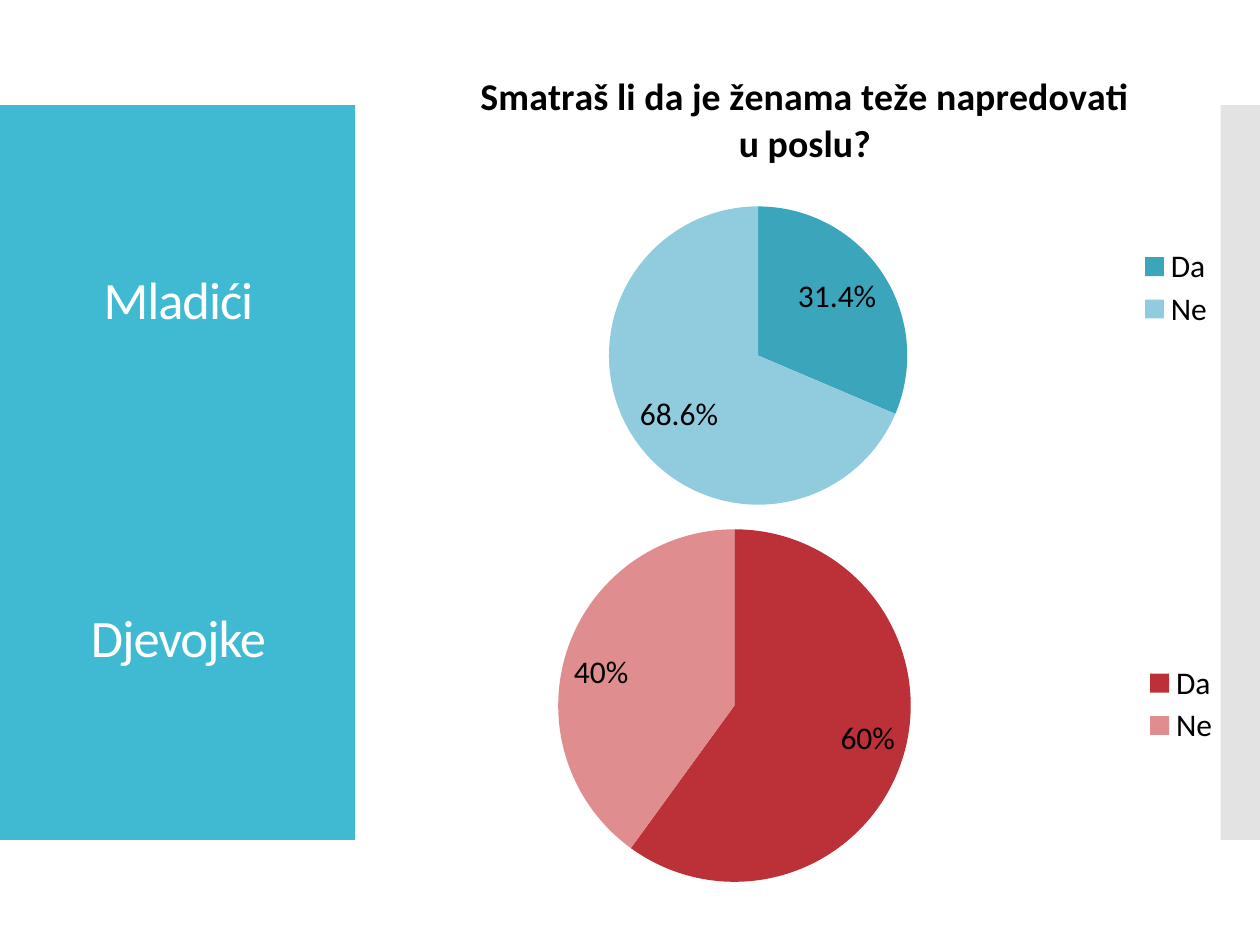
from lxml import etree
from pptx import Presentation
from pptx import util as u
from pptx.chart.data import CategoryChartData
from pptx.dml.color import RGBColor
from pptx.enum import chart as charts, shapes, text
from pptx.oxml import parse_xml
from pptx.oxml.ns import nsdecls, qn

FONT = "Calibri"
QUESTION = "Smatraš li da je ženama teže napredovati u poslu?"
GROUPS = ["Mladići", "Djevojke"]
ANSWERS = ["Da", "Ne"]

# Boxes are left, top, width, height in points
BANDS = [
    {"box": (0, 60, 203, 420), "fill": "40BAD2"},
    {"box": (697.5, 60, 22.5, 420), "fill": "C8C8C8", "alpha": 50},
]
PIES = [
    {"name": QUESTION, "title": QUESTION, "values": (0.314, 0.686), "format": "0.0%",
     "colors": ("3AA5BB", "90CCDE"), "box": (218, 26, 484, 278),
     "plot": (348, 118, 170.5, 170.5), "legend": (650, 139, 44, 51)},
    {"name": "Series 1", "title": None, "values": (0.6, 0.4), "format": "0%",
     "colors": ("BB3137", "E08D8F"), "box": (221, 292, 484, 221),
     "plot": (319, 302.5, 201.5, 201.5), "legend": (653, 377, 44, 51)},
]


def points(box):
    return [u.Pt(length) for length in box]


def color(value):
    return RGBColor.from_string(value)


def style_font(font, size, bold=False, fill="000000"):
    font.name, font.size, font.bold = FONT, u.Pt(size), bold
    font.color.rgb = color(fill)


def write(para, content, size, bold=False, fill="000000", tracking=None):
    span = para.add_run()
    span.text = content
    style_font(span.font, size, bold, fill)
    if tracking is not None:
        span.font._element.set("spc", str(round(tracking * 100)))


def add_band(page, box, fill, alpha=None):
    band = page.shapes.add_shape(shapes.MSO_SHAPE.RECTANGLE, *points(box))
    band.shadow.inherit = False
    band.fill.solid()
    band.fill.fore_color.rgb = color(fill)
    band.line.fill.background()
    if alpha is not None:
        tint = band._element.spPr.find(".//" + qn("a:srgbClr"))
        etree.SubElement(tint, qn("a:alpha")).set("val", str(alpha * 1000))


def layout_xml(part, frame, inner=False):
    """Manual layout of a chart part, as fractions of the chart frame."""
    left, top, width, height = frame
    shares = {"x": (part[0] - left) / width, "y": (part[1] - top) / height,
              "w": part[2] / width, "h": part[3] / height}
    target = '<c:layoutTarget val="inner"/>' if inner else ""
    modes = '<c:xMode val="edge"/><c:yMode val="edge"/>'
    sizes = "".join(f'<c:{key} val="{share:.4f}"/>' for key, share in shares.items())
    return parse_xml(f'<c:layout {nsdecls("c")}><c:manualLayout>{target}{modes}{sizes}'
                     "</c:manualLayout></c:layout>")


def add_pie(page, pie):
    data = CategoryChartData(number_format=pie["format"])
    data.categories = ANSWERS
    data.add_series(pie["name"], pie["values"])
    chart = page.shapes.add_chart(
        charts.XL_CHART_TYPE.PIE, *points(pie["box"]), data).chart
    style_font(chart.font, 18)

    chart.has_title = pie["title"] is not None
    if chart.has_title:
        write(chart.chart_title.text_frame.paragraphs[0], pie["title"], 21.6, bold=True)
        chart.chart_title.include_in_layout = False

    # Slices and their values
    plot = chart.plots[0]
    plot.vary_by_categories = True
    for index, fill in enumerate(pie["colors"]):
        slice_fill = plot.series[0].points[index].format.fill
        slice_fill.solid()
        slice_fill.fore_color.rgb = color(fill)
    plot.has_data_labels = True
    labels = plot.data_labels
    labels.show_value, labels.show_percentage = True, False
    labels.number_format, labels.number_format_is_linked = pie["format"], False
    labels.position = charts.XL_LABEL_POSITION.INSIDE_END
    style_font(labels.font, 18)

    # Legend and exact placement
    chart.has_legend = True
    legend = chart.legend
    legend.position = charts.XL_LEGEND_POSITION.RIGHT
    legend.include_in_layout = False
    style_font(legend.font, 18)
    legend._element.find(qn("c:legendPos")).addnext(layout_xml(pie["legend"], pie["box"]))
    area = chart._chartSpace.find(".//" + qn("c:plotArea"))
    for old in area.findall(qn("c:layout")):
        area.remove(old)
    area.insert(0, layout_xml(pie["plot"], pie["box"], inner=True))


def add_groups(page):
    box = page.shapes.add_textbox(*points((15, 88.5, 174, 362)))
    frame = box.text_frame
    frame.word_wrap = True
    frame.vertical_anchor = text.MSO_ANCHOR.MIDDLE
    for index, group in enumerate(GROUPS):
        para = frame.add_paragraph() if index else frame.paragraphs[0]
        para.alignment = text.PP_ALIGN.CENTER
        para.line_spacing = 0.9
        para.space_before = u.Pt(161 if index else 0)
        write(para, group, 30, fill="FFFFFF", tracking=-0.6)


def main():
    deck = Presentation()
    deck.slide_width, deck.slide_height = u.Pt(720), u.Pt(540)
    page = deck.slides.add_slide(deck.slide_layouts[6])
    for band in BANDS:
        add_band(page, **band)
    add_groups(page)
    for pie in PIES:
        add_pie(page, pie)
    deck.save("out.pptx")


if __name__ == "__main__":
    main()
